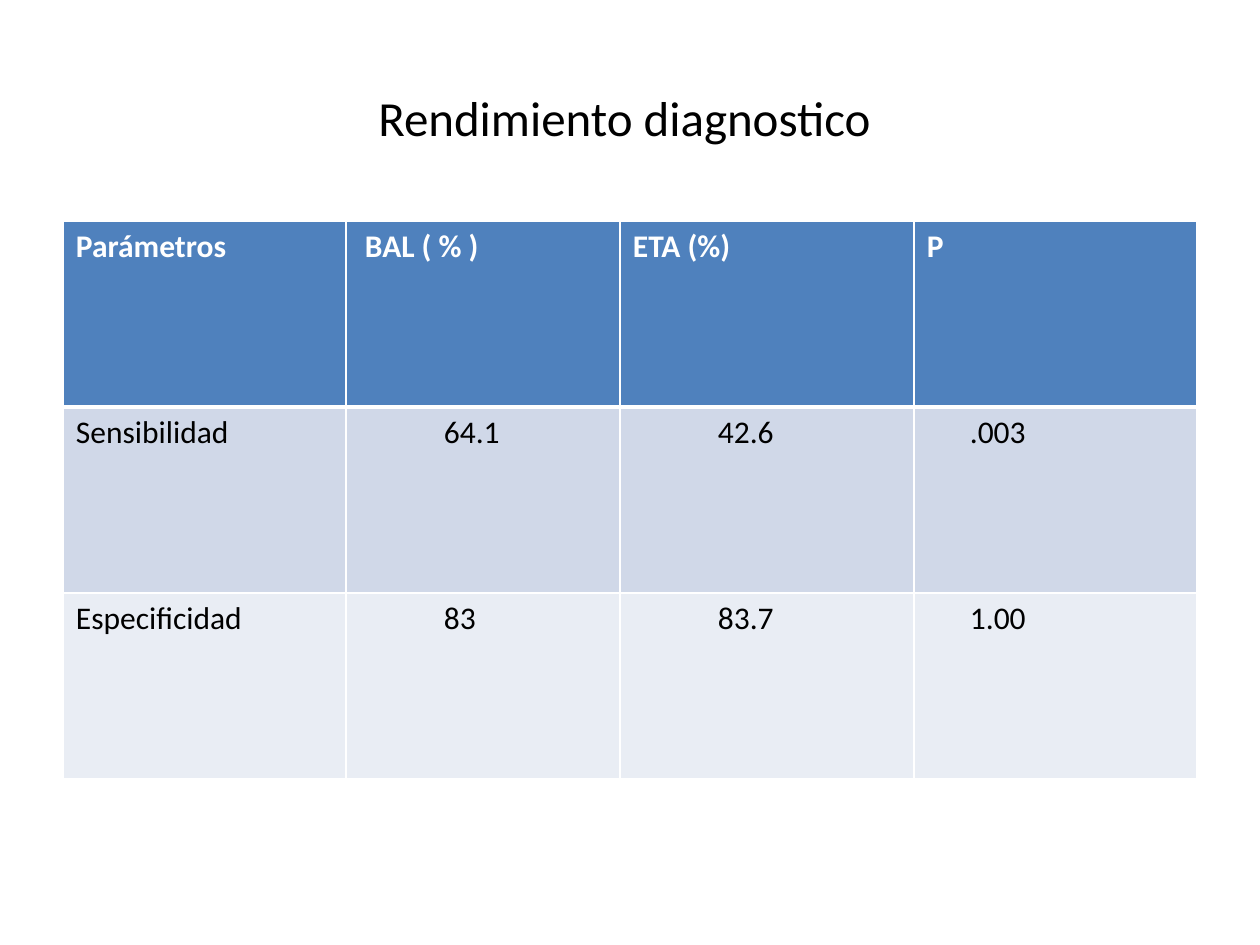
from lxml.etree import SubElement
from pptx import Presentation
from pptx.dml.color import RGBColor
from pptx.enum.text import MSO_ANCHOR, PP_ALIGN
from pptx.oxml.ns import qn
from pptx.util import Pt

PX = 914400 / 126
FONT = "Calibri"
TITLE = "Rendimiento diagnostico "
ROWS = [
    ("Parámetros", "BAL ( % )", "ETA (%)", "P"),
    ("Sensibilidad", "64.1", "42.6", ".003"),
    ("Especificidad", "83", "83.7", "1.00"),
]
ROW_FILLS = ["4F81BD", "D0D8E8", "E9EDF4"]
COLUMN_WIDTHS = [283, 274, 294, 283]
ROW_HEIGHT = 186
HEADER_INDENTS = [13, 19, 13, 13]
VALUE_INDENTS = [13, 98, 98, 56]


def px(length):
    return round(length * PX)


def color(value):
    return RGBColor.from_string(value)


def style_text(paragraph, size, value, bold=False):
    for run in paragraph.runs:
        run.font.name = FONT
        run.font.size = Pt(size)
        run.font.bold = bold
        run.font.color.rgb = color(value)


def add_border(cell, side, width):
    properties = cell._tc.get_or_add_tcPr()
    line = SubElement(properties, qn(f"a:ln{side}"), w=str(Pt(width)))
    fill = SubElement(line, qn("a:solidFill"))
    SubElement(fill, qn("a:srgbClr"), val="FFFFFF")


def format_cell(cell, row, column):
    header = row == 0
    cell.text = ROWS[row][column]
    cell.margin_left = px((HEADER_INDENTS if header else VALUE_INDENTS)[column])
    style_text(cell.text_frame.paragraphs[0], 18, "FFFFFF" if header else "000000", header)
    widths = {"L": 1, "R": 1, "T": 3 if row == 1 else 1, "B": 3 if header else 1}
    for side, width in widths.items():
        add_border(cell, side, width)
    cell.fill.solid()
    cell.fill.fore_color.rgb = color(ROW_FILLS[row])


def add_title(slide):
    title = slide.shapes.title
    title.left, title.top, title.width, title.height = map(px, (63, 38, 1134, 157))
    frame = title.text_frame
    frame.text = TITLE
    frame.vertical_anchor = MSO_ANCHOR.MIDDLE
    frame.paragraphs[0].alignment = PP_ALIGN.CENTER
    style_text(frame.paragraphs[0], 28, "000000")


def add_results(slide):
    table = slide.shapes.add_table(
        len(ROWS), len(COLUMN_WIDTHS), px(63), px(221),
        px(sum(COLUMN_WIDTHS)), px(ROW_HEIGHT * len(ROWS)),
    ).table
    for column, width in zip(table.columns, COLUMN_WIDTHS):
        column.width = px(width)
    for row_index, row in enumerate(table.rows):
        row.height = px(ROW_HEIGHT)
        for column_index, cell in enumerate(row.cells):
            format_cell(cell, row_index, column_index)


def main():
    presentation = Presentation()
    presentation.slide_width, presentation.slide_height = px(1260), px(945)
    slide = presentation.slides.add_slide(presentation.slide_layouts[5])
    add_title(slide)
    add_results(slide)
    presentation.save("out.pptx")


if __name__ == "__main__":
    main()
